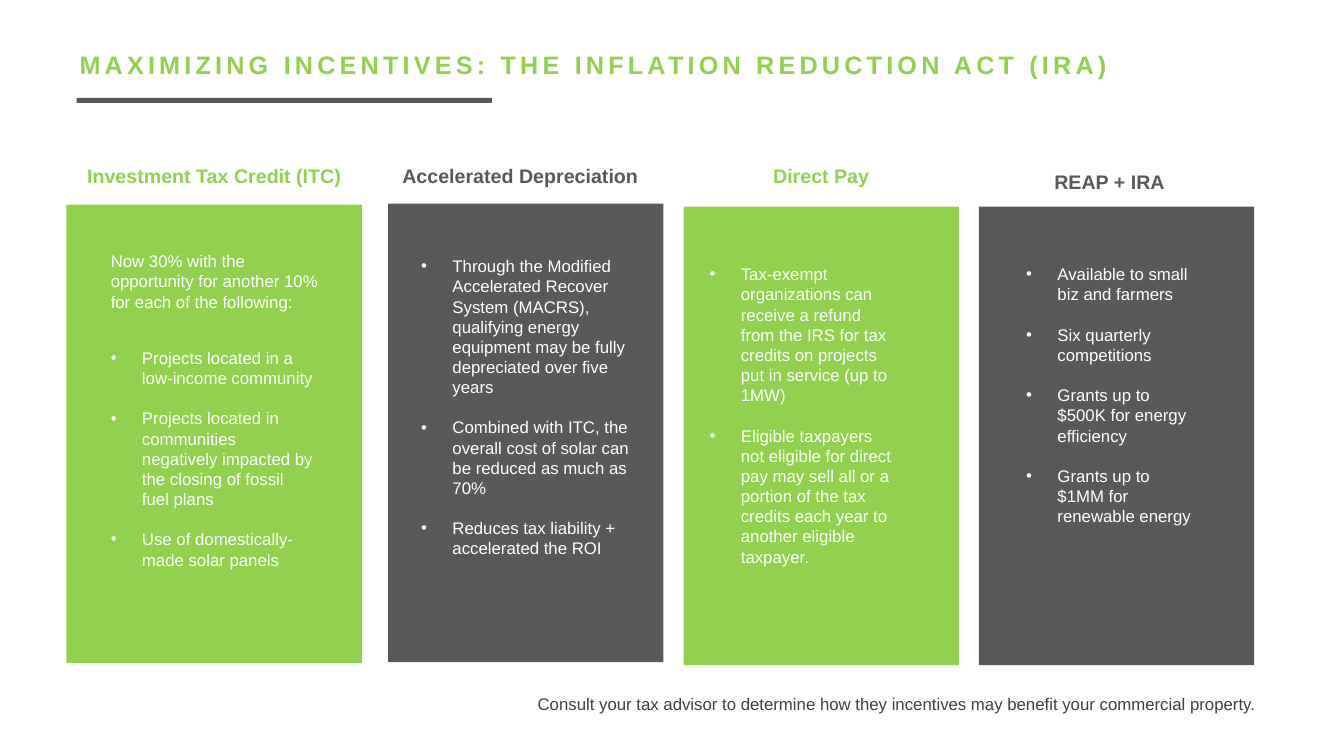
from dataclasses import dataclass

from pptx import Presentation
from pptx.dml.color import RGBColor
from pptx.enum.shapes import MSO_SHAPE
from pptx.enum.text import PP_ALIGN
from pptx.oxml import parse_xml
from pptx.oxml.ns import nsdecls
from pptx.util import Inches, Pt

LEFT, CENTER, RIGHT = PP_ALIGN.LEFT, PP_ALIGN.CENTER, PP_ALIGN.RIGHT
RECTANGLE = MSO_SHAPE.RECTANGLE

COLORS = {
    "green": "92D050",
    "gray": "595959",
    "footnote": "404040",
    "white": "FFFFFF",
}
FONT = "Arial"
SLIDE_WIDTH, SLIDE_HEIGHT = 13.33, 7.5
MARGIN = 0.66
COLUMN_START, COLUMN_PITCH, COLUMN_WIDTH = 0.92, 2.93, 2.73
PANEL_HEIGHT = 4.55
BULLET_INDENT = 0.31
BULLET_GAP = 14.4


@dataclass
class Incentive:
    heading: str
    color: str
    panel_top: float
    heading_box: tuple
    bullet_box: tuple
    bullets: list


INCENTIVES = [
    Incentive(
        "Investment Tax Credit (ITC)", "green", 2.03,
        (0, 1.58, 2.93), (0.34, 3.4, 2.22, 2.52),
        ["Projects located in a low-income community",
         "Projects located in communities negatively impacted by the closing of fossil fuel plans",
         "Use of domestically-made solar panels"],
    ),
    Incentive(
        "Accelerated Depreciation", "gray", 2.02,
        (-0.03, 1.58, 2.68), (0.23, 2.49, 2.26, 3.53),
        ["Through the Modified Accelerated Recover System (MACRS), qualifying energy "
         "equipment may be fully depreciated over five years",
         "Combined with ITC, the overall cost of solar can be reduced as much as 70%",
         "Reduces tax liability + accelerated the ROI"],
    ),
    Incentive(
        "Direct Pay", "green", 2.05,
        (0, 1.58, 2.73), (0.16, 2.57, 2, 3.53),
        ["Tax-exempt organizations can receive a refund from the IRS for tax credits on "
         "projects put in service (up to 1MW)",
         "Eligible taxpayers not eligible for direct pay may sell all or a portion of the "
         "tax credits each year to another eligible taxpayer."],
    ),
    Incentive(
        "REAP + IRA", "gray", 2.05,
        (-0.04, 1.64, 2.67), (0.37, 2.57, 1.85, 2.93),
        ["Available to small biz and farmers",
         "Six quarterly competitions",
         "Grants up to $500K for energy efficiency",
         "Grants up to $1MM for renewable energy"],
    ),
]


def column_span(index):
    if index == 0:
        return MARGIN, COLUMN_PITCH
    return COLUMN_START + index * COLUMN_PITCH, COLUMN_WIDTH


def add_rectangle(slide, box, color):
    shape = slide.shapes.add_shape(RECTANGLE, *map(Inches, box))
    shape.shadow.inherit = False
    shape.fill.solid()
    shape.fill.fore_color.rgb = RGBColor.from_string(COLORS[color])
    shape.line.fill.background()


def add_text(slide, box, text, size, color, bold=False, align=LEFT):
    text_frame = slide.shapes.add_textbox(*map(Inches, box)).text_frame
    text_frame.word_wrap = True
    text_frame.text = text
    for paragraph in text_frame.paragraphs:
        paragraph.alignment = align
        for run in paragraph.runs:
            run.font.name = FONT
            run.font.size = Pt(size)
            run.font.bold = bold
            run.font.color.rgb = RGBColor.from_string(COLORS[color])
    return text_frame


def add_bullets(slide, box, bullets):
    text_frame = add_text(slide, box, "\n".join(bullets), 12, "white")
    for paragraph in text_frame.paragraphs:
        paragraph.space_after = Pt(BULLET_GAP)
        properties = paragraph._p.get_or_add_pPr()
        properties.set("marL", str(Inches(BULLET_INDENT)))
        properties.set("indent", str(-Inches(BULLET_INDENT)))
        properties.append(parse_xml(f'<a:buFont {nsdecls("a")} typeface="{FONT}"/>'))
        properties.append(parse_xml(f'<a:buChar {nsdecls("a")} char="•"/>'))


def add_title(slide, text):
    text_frame = add_text(slide, (0.69, 0.44, 10.98, 0.4), text, 18, "green", bold=True)
    text_frame.paragraphs[0].runs[0].font._element.set("spc", "300")
    add_rectangle(slide, (0.76, 0.97, 4.12, 0.05), "gray")


def add_incentive(slide, index, incentive):
    left, width = column_span(index)
    add_rectangle(slide, (left, incentive.panel_top, width, PANEL_HEIGHT), incentive.color)
    shift, top, heading_width = incentive.heading_box
    add_text(slide, (left + shift, top, heading_width, 0.34), incentive.heading,
             14, incentive.color, bold=True, align=CENTER)
    inset, top, bullet_width, height = incentive.bullet_box
    add_bullets(slide, (left + inset, top, bullet_width, height), incentive.bullets)


def main():
    presentation = Presentation()
    presentation.slide_width = Inches(SLIDE_WIDTH)
    presentation.slide_height = Inches(SLIDE_HEIGHT)
    slide = presentation.slides.add_slide(presentation.slide_layouts[6])

    add_title(slide, "MAXIMIZING INCENTIVES: THE INFLATION REDUCTION ACT (IRA)")
    for index, incentive in enumerate(INCENTIVES):
        add_incentive(slide, index, incentive)
    add_text(slide, (1, 2.44, 2.28, 0.71),
             "Now 30% with the opportunity for another 10% for each of the following:",
             12, "white")
    add_text(slide, (4.88, 6.83, 7.68, 0.3),
             "Consult your tax advisor to determine how they incentives may benefit "
             "your commercial property.",
             12, "footnote", align=RIGHT)
    presentation.save("out.pptx")


if __name__ == "__main__":
    main()
